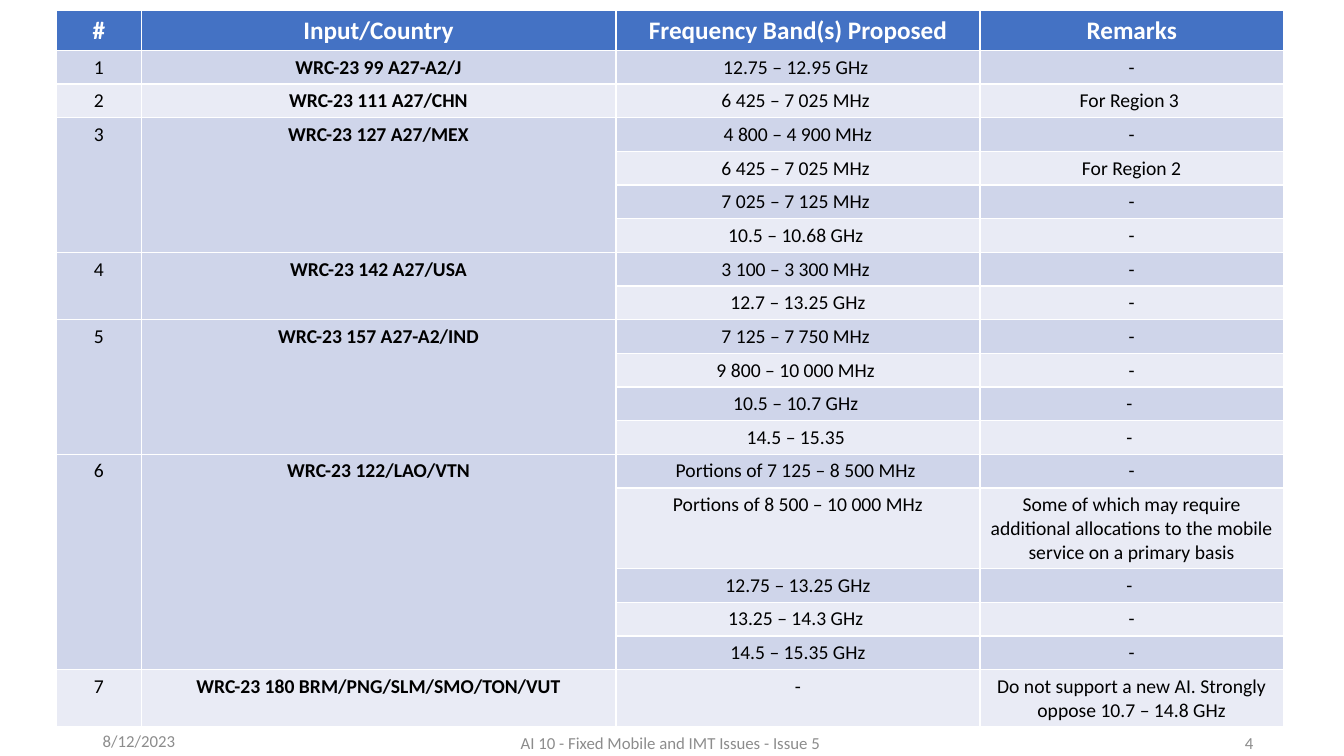
"""Build the slide listing proposed frequency bands by input and country."""
from pptx import Presentation
from pptx.dml.color import RGBColor
from pptx.enum import text as t
from pptx.util import Inches, Pt

HUES = {"head": "4472C4", "odd": "CFD5EA", "even": "E9EBF5",
        "white": "FFFFFF", "black": "000000", "gray": "8C8C8C"}
LEFT, MID, RIGHT = t.PP_ALIGN.LEFT, t.PP_ALIGN.CENTER, t.PP_ALIGN.RIGHT


def write(frame, words, size=14, hue="black", bold=False, align=MID):
    para = frame.paragraphs[0]
    para.alignment = align
    run = para.add_run()
    run.text = words
    run.font.name = "Calibri"
    run.font.size = Pt(size)
    run.font.bold = bold
    run.font.color.rgb = RGBColor.from_string(HUES[hue])


HEADS = ["#", "Input/Country", "Frequency Band(s) Proposed", "Remarks"]
INPUTS = [
    ("WRC-23 99 A27-A2/J", [("12.75 – 12.95 GHz ", "-")]),
    ("WRC-23 111 A27/CHN", [("6 425 – 7 025 MHz ", "For Region 3 ")]),
    ("WRC-23 127 A27/MEX", [
        ("4 800 – 4 900 MHz", "-"),
        ("6 425 – 7 025 MHz ", "For Region 2"),
        ("7 025 – 7 125 MHz ", "-"),
        ("10.5 – 10.68 GHz ", "-")]),
    ("WRC-23 142 A27/USA", [
        ("3 100 – 3 300 MHz ", "-"),
        ("12.7 – 13.25 GHz", "-")]),
    ("WRC-23 157 A27-A2/IND", [
        ("7 125 – 7 750 MHz ", "-"),
        ("9 800 – 10 000 MHz ", "-"),
        ("10.5 – 10.7 GHz ", "- "),
        ("14.5 – 15.35 ", "- ")]),
    ("WRC-23 122/LAO/VTN", [
        ("Portions of 7 125 – 8 500 MHz ", "-"),
        ("Portions of 8 500 – 10 000 MHz",
         "Some of which may require additional allocations to the mobile "
         "service on a primary basis"),
        ("12.75 – 13.25 GHz", "- "),
        ("13.25 – 14.3 GHz ", "-"),
        ("14.5 – 15.35 GHz", "-")]),
    ("WRC-23 180 BRM/PNG/SLM/SMO/TON/VUT", [
        ("-", "Do not support a new AI. Strongly oppose 10.7 – 14.8 GHz")]),
]
WIDTHS = [0.84, 4.71, 3.61, 3.01]
TALL = {14: 0.76, 18: 0.54}

deck = Presentation()
deck.slide_width, deck.slide_height = Inches(13.33), Inches(7.5)
slide = deck.slides.add_slide(deck.slide_layouts[6])

FOOTS = [("8/12/2023", 0.92, 7.15, 3, LEFT),
         ("AI 10 - Fixed Mobile and IMT Issues - Issue 5 ", 4.42, 7.17, 4.5, MID),
         ("4", 9.53, 7.17, 3, RIGHT)]
for words, x, y, wide, align in FOOTS:
    box = slide.shapes.add_textbox(Inches(x), Inches(y), Inches(wide), Inches(0.4))
    box.text_frame.word_wrap = True
    box.text_frame.vertical_anchor = t.MSO_ANCHOR.MIDDLE
    write(box.text_frame, words, size=12, hue="gray", align=align)

count = 1 + sum(len(bands) for _, bands in INPUTS)
grid = slide.shapes.add_table(count, len(HEADS), Inches(0.56), Inches(0.1),
                              Inches(sum(WIDTHS)), Inches(7.1)).table
for col, wide in zip(grid.columns, WIDTHS):
    col.width = Inches(wide)
for row, line in enumerate(grid.rows):
    line.height = Inches(TALL.get(row, 0.32))
    hue = "head" if row == 0 else "odd" if row % 2 else "even"
    for cell in line.cells:
        cell.fill.solid()
        cell.fill.fore_color.rgb = RGBColor.from_string(HUES[hue])

for col, words in enumerate(HEADS):
    write(grid.cell(0, col).text_frame, words, size=18, hue="white", bold=True)

row = 1
for num, (name, bands) in enumerate(INPUTS, 1):
    last = row + len(bands) - 1
    for col, words in enumerate([str(num), name]):
        cell = grid.cell(row, col)
        if last > row:
            cell.merge(grid.cell(last, col))
        write(cell.text_frame, words, bold=col == 1)
    for band, note in bands:
        write(grid.cell(row, 2).text_frame, band)
        write(grid.cell(row, 3).text_frame, note)
        row += 1

deck.save("out.pptx")
